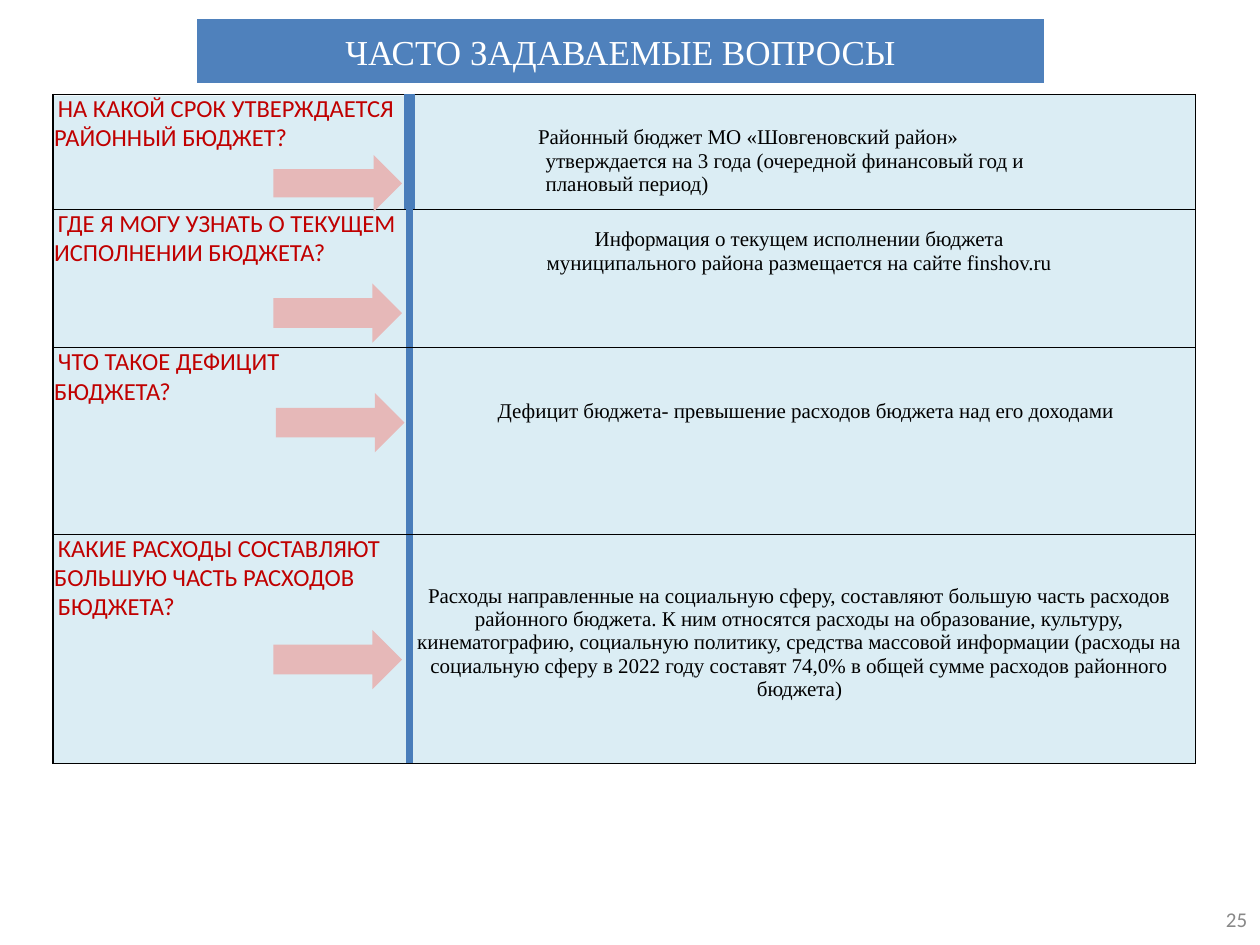
from pptx import Presentation
from pptx.dml.color import RGBColor
from pptx.enum.shapes import MSO_SHAPE as SHAPE
from pptx.enum.text import MSO_ANCHOR as ANCHOR, MSO_AUTO_SIZE as AUTO, PP_ALIGN as ALIGN
from pptx.oxml import parse_xml
from pptx.oxml.ns import nsdecls
from pptx.util import Inches, Pt

BLUE = RGBColor(0x4F, 0x81, 0xBC)
DIVIDER = RGBColor(0x49, 0x7D, 0xBA)
PALE = RGBColor(0xDB, 0xED, 0xF4)
PINK = RGBColor(0xE6, 0xB8, 0xB8)
RED = RGBColor(0xC0, 0x00, 0x00)
BLACK = RGBColor(0, 0, 0)
WHITE = RGBColor(0xFF, 0xFF, 0xFF)
GRAY = RGBColor(0x88, 0x88, 0x88)
SERIF, SANS = "Times New Roman", "Calibri"


def write(tf, text, font, size, color, align=ALIGN.LEFT, left=0, first=0, spacing=None):
    """Fill a text frame, one paragraph per line of text."""
    tf.word_wrap = True
    for i, line in enumerate(text.split("\n")):
        p = tf.paragraphs[0] if i == 0 else tf.add_paragraph()
        p.text = line
        p.alignment = align
        p.line_spacing = spacing
        pPr = p._p.get_or_add_pPr()
        pPr.set("marL", str(Inches(left)))
        pPr.set("indent", str(Inches(first)))
        for r in p.runs:
            r.font.name, r.font.size, r.font.color.rgb = font, Pt(size), color


def set_borders(cell, **edges):
    """Draw cell edges given as L, R, T, B = (color, width in points)."""
    tcPr = cell._tc.get_or_add_tcPr()
    for i, (edge, (color, width)) in enumerate(edges.items()):
        tcPr.insert(i, parse_xml(
            f'<a:ln{edge} {nsdecls("a")} w="{Pt(width)}"><a:solidFill>'
            f'<a:srgbClr val="{color}"/></a:solidFill></a:ln{edge}>'))


prs = Presentation()
prs.slide_width, prs.slide_height = Inches(10), Inches(7.5)
s = prs.slides.add_slide(prs.slide_layouts[5])

# Title banner
title = s.shapes.title
title.left, title.top, title.width, title.height = map(Inches, (1.54, 0.13, 6.77, 0.55))
title.fill.solid()
title.fill.fore_color.rgb = BLUE
title.line.color.rgb = WHITE
title.line.width = Pt(3)
tf = title.text_frame
tf.auto_size = AUTO.NONE
tf.vertical_anchor = ANCHOR.MIDDLE
tf.margin_left = tf.margin_right = tf.margin_top = tf.margin_bottom = 0
write(tf, "ЧАСТО ЗАДАВАЕМЫЕ ВОПРОСЫ", SERIF, 20, WHITE, ALIGN.CENTER)

# Panel behind the first question
panel = s.shapes.add_shape(SHAPE.RECTANGLE, *map(Inches, (0.43, 0.76, 2.78, 0.91)))
panel.shadow.inherit = False
panel.fill.solid()
panel.fill.fore_color.rgb = PALE
panel.line.fill.background()

# Questions and answers: row height, question, answer, answer top margin, answer format
ROWS = [
    (0.91, "НА КАКОЙ СРОК УТВЕРЖДАЕТСЯ\vРАЙОННЫЙ БЮДЖЕТ?",
     "Районный бюджет МО «Шовгеновский район»\v"
     "утверждается на 3 года (очередной финансовый год и\vплановый период)",
     0.25, {"left": 1.05, "first": -0.06}),
    (1.1, "ГДЕ Я МОГУ УЗНАТЬ О ТЕКУЩЕМ\vИСПОЛНЕНИИ БЮДЖЕТА?",
     "Информация о текущем исполнении бюджета\n"
     "муниципального района размещается на сайте finshov.ru",
     0.15, {"align": ALIGN.CENTER}),
    (1.48, "ЧТО ТАКОЕ ДЕФИЦИТ\vБЮДЖЕТА?",
     "Дефицит бюджета- превышение расходов бюджета над его доходами",
     0.41, {"left": 0.67}),
    (1.82, "КАКИЕ РАСХОДЫ СОСТАВЛЯЮТ\vБОЛЬШУЮ ЧАСТЬ РАСХОДОВ\nБЮДЖЕТА?",
     "Расходы направленные на социальную сферу, составляют большую часть расходов "
     "районного бюджета. К ним относятся расходы на образование, культуру, "
     "кинематографию, социальную политику, средства массовой информации (расходы на "
     "социальную сферу в 2022 году составят 74,0% в общей сумме расходов районного "
     "бюджета)",
     0.4, {"align": ALIGN.CENTER}),
]
table = s.shapes.add_table(len(ROWS), 2, *map(Inches, (0.42, 0.75, 9.07, 5.32))).table
table.first_row = table.horz_banding = False
table.columns[0].width, table.columns[1].width = Inches(2.83), Inches(6.24)

for i, (height, question, answer, top, fmt) in enumerate(ROWS):
    table.rows[i].height = Inches(height)
    left, right = table.cell(i, 0), table.cell(i, 1)
    for cell in (left, right):
        cell.margin_left = cell.margin_right = cell.margin_top = cell.margin_bottom = 0
        cell.fill.solid()
        cell.fill.fore_color.rgb = PALE
    if i == 0:
        left.fill.background()
    right.margin_top = Inches(top)
    right.margin_left, right.margin_right = Inches(0.03), Inches(0.08)
    write(left.text_frame, question, SANS, 14, RED, left=0.01, first=0.03, spacing=Pt(16.8))
    write(right.text_frame, answer, SERIF, 12, BLACK, **fmt)

    divider = (DIVIDER, 6.75 if i == 0 else 4.5)
    outer = (BLACK, 1)
    across = {"T": (BLACK, 1 if i == 0 else 0.5),
              "B": (BLACK, 1 if i == len(ROWS) - 1 else 0.5)}
    set_borders(left, L=outer, R=divider, **across)
    set_borders(right, L=divider, R=outer, **across)

# Arrows from question to answer
for x, y, height in [(2.17, 1.23, 0.45), (2.17, 2.25, 0.47), (2.19, 3.12, 0.47), (2.17, 5, 0.47)]:
    arrow = s.shapes.add_shape(SHAPE.RIGHT_ARROW, *map(Inches, (x, y, 1.02, height)))
    arrow.shadow.inherit = False
    arrow.fill.solid()
    arrow.fill.fore_color.rgb = PINK
    arrow.line.fill.background()

# Page number
tf = s.shapes.add_textbox(*map(Inches, (9.69, 7.22, 0.27, 0.2))).text_frame
tf.margin_left = tf.margin_right = tf.margin_top = tf.margin_bottom = 0
write(tf, "25", SANS, 12, GRAY, left=0.04, spacing=Pt(12.4))

prs.save("out.pptx")
